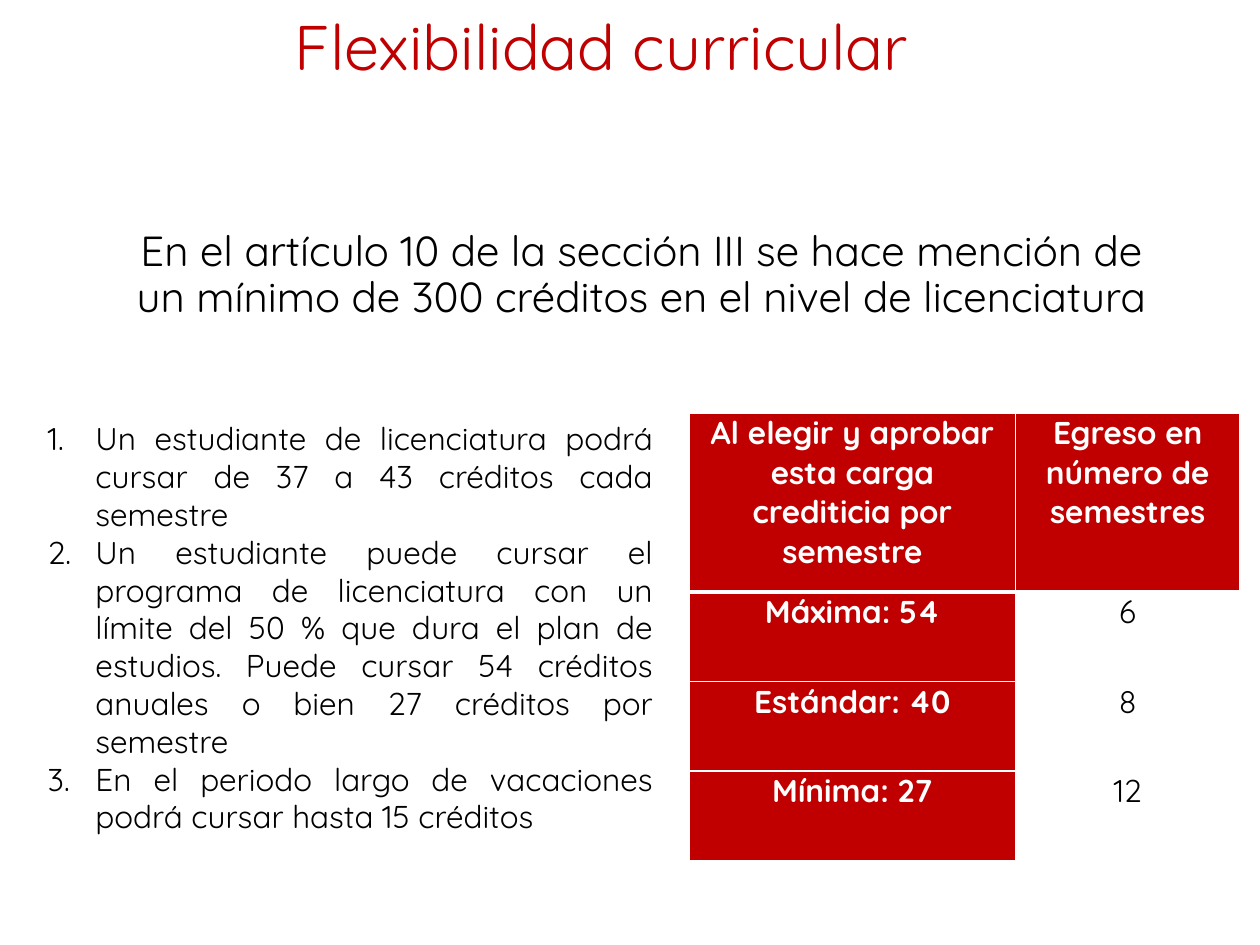
from lxml import etree
from pptx import Presentation
from pptx import util as u
from pptx.dml.color import RGBColor
from pptx.enum import text
from pptx.oxml import ns

FONT, RED, BLACK, WHITE = "Quicksand", "C00000", "000000", "FFFFFF"


def style(para, size, color, align, bold=False):
    para.alignment = align
    para.font.name = FONT
    para.font.size = u.Pt(size)
    para.font.bold = bold
    para.font.color.rgb = RGBColor.from_string(color)


def set_bullet(para, tag, indent, **attributes):
    props = para._p.get_or_add_pPr()
    props.set("marL", str(u.Inches(indent)))
    props.set("indent", str(-u.Inches(indent)))
    etree.SubElement(props, ns.qn(tag), **attributes)


deck = Presentation()
deck.slide_width, deck.slide_height = u.Inches(10), u.Inches(7.5)
page = deck.slides.add_slide(deck.slide_layouts[1])

title, body = page.shapes.title, page.placeholders[1]
places = [(title, (2.24, -0.11, 7.48, 1.02)), (body, (0.78, 1.78, 8.62, 4.76))]
for holder, place in places:
    holder.left, holder.top, holder.width, holder.height = map(u.Inches, place)
    holder.text_frame.auto_size = text.MSO_AUTO_SIZE.NONE

title.text_frame.text = "Flexibilidad curricular"
title.text_frame.vertical_anchor = text.MSO_ANCHOR.MIDDLE
heading = title.text_frame.paragraphs[0]
style(heading, 36, RED, text.PP_ALIGN.LEFT)
heading.line_spacing = 0.9

body.text_frame.text = (
    "En el artículo 10 de la sección III se hace mención de un "
    "mínimo de 300 créditos en el nivel de licenciatura"
)
intro = body.text_frame.paragraphs[0]
set_bullet(intro, "a:buNone", 0)
style(intro, 24, BLACK, text.PP_ALIGN.CENTER)
intro.line_spacing = 0.9
intro.space_before = u.Pt(0)

rules = [
    "Un estudiante de licenciatura podrá cursar de 37 a 43 créditos cada semestre",
    "Un estudiante puede cursar el programa de licenciatura con un límite del 50 % "
    "que dura el plan de estudios. Puede cursar 54 créditos anuales o bien "
    "27 créditos por semestre",
    "En el periodo largo de vacaciones podrá cursar hasta 15 créditos",
]
box = page.shapes.add_textbox(u.Inches(0.28), u.Inches(3.28), u.Inches(5), u.Inches(3.43))
box.text_frame.word_wrap = True
box.text_frame.text = "\n".join(rules)
for para in box.text_frame.paragraphs:
    set_bullet(para, "a:buAutoNum", 0.38, type="arabicPeriod")
    style(para, 18, BLACK, text.PP_ALIGN.JUSTIFY)

loads = [
    ("Al elegir y aprobar esta carga crediticia por semestre", "Egreso en número de semestres"),
    ("Máxima: 54", "6"),
    ("Estándar: 40", "8"),
    ("Mínima: 27", "12"),
]
frame = page.shapes.add_table(
    len(loads), 2, u.Inches(5.47), u.Inches(3.28), u.Inches(4.37), u.Inches(3.54)
)
table = frame.table
for column, width in zip(table.columns, (2.59, 1.78)):
    column.width = u.Inches(width)
for row, height in zip(table.rows, (1.42, 0.71, 0.71, 0.71)):
    row.height = u.Inches(height)

for r, load in enumerate(loads):
    for c, label in enumerate(load):
        cell = table.cell(r, c)
        cell.text = label
        cell.margin_left = cell.margin_right = u.Inches(0.07)
        cell.margin_top = cell.margin_bottom = 0
        is_header = r == 0 or c == 0
        style(cell.text_frame.paragraphs[0], 18, WHITE if is_header else BLACK,
              text.PP_ALIGN.CENTER, is_header)
        for side in "LRTB":
            is_thick = (r, side) in ((0, "B"), (1, "T"))
            line = etree.SubElement(cell._tc.get_or_add_tcPr(), ns.qn(f"a:ln{side}"),
                                    w=str(u.Pt(3 if is_thick else 1)))
            paint = etree.SubElement(line, ns.qn("a:solidFill"))
            etree.SubElement(paint, ns.qn("a:srgbClr"), val=WHITE)
        cell.fill.solid()
        cell.fill.fore_color.rgb = RGBColor.from_string(RED if is_header else WHITE)

deck.save("out.pptx")
